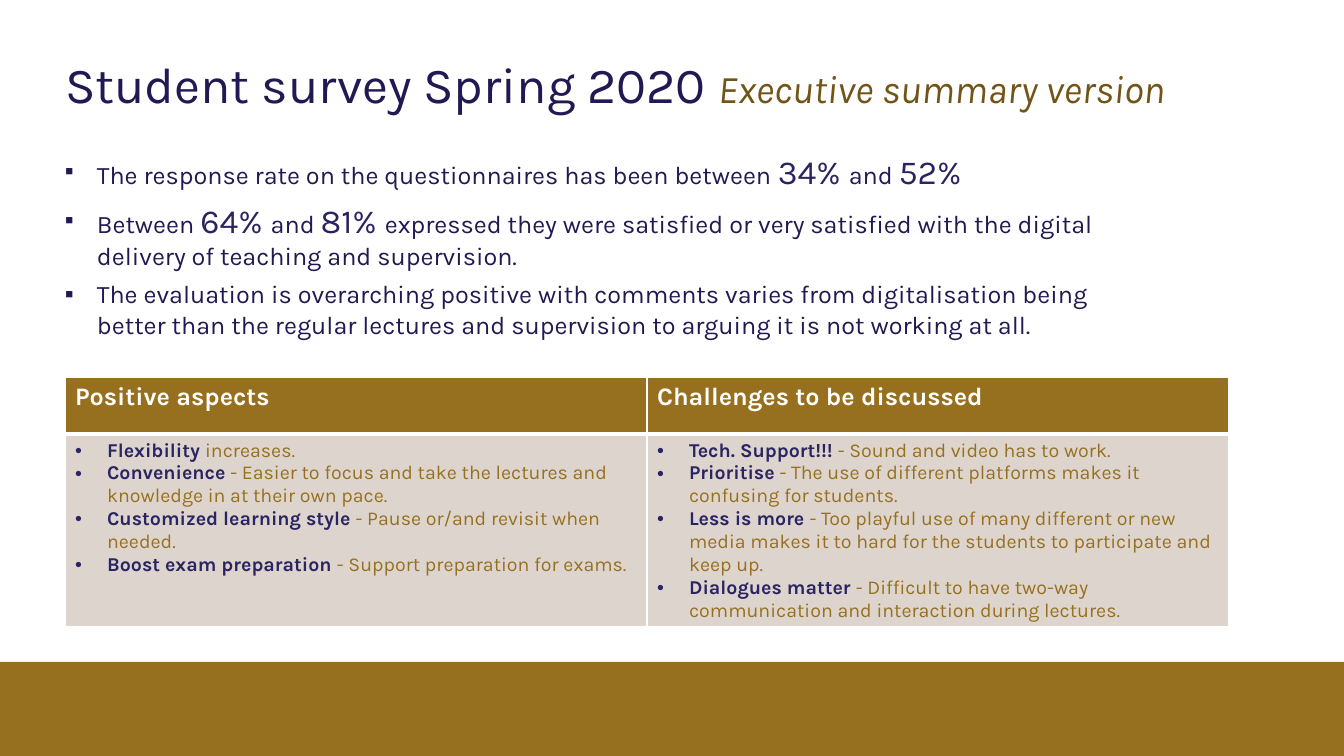
from lxml import etree
from pptx import Presentation
from pptx import util as u
from pptx.dml.color import RGBColor
from pptx.enum import shapes, text
from pptx.oxml.ns import qn

INK = {"navy": "211A52", "plum": "2A2463", "gold": "97701F",
       "bronze": "715417", "sand": "DDD5CD", "white": "FFFFFF"}
FONT = "Karla"
INDENT = 32

TITLE = [("Student survey Spring 2020 ", 36, "navy", False),
         ("Executive summary version", 28, "bronze", True)]

POINTS = [
    ["The response rate on the questionnaires has been between ", "34% ", "and ", "52%"],
    ["Between ", "64% ", "and ", "81% ",
     "expressed they were satisfied or very satisfied with the digital "
     "delivery of teaching and supervision."],
    ["The evaluation is overarching positive with comments varies from digitalisation "
     "being better than the regular lectures and supervision to arguing it is not "
     "working at all."],
]

ASPECTS = {
    "Positive aspects": [
        ("Flexibility ", "increases."),
        ("Convenience", " - Easier to focus and take the lectures and knowledge in "
                        "at their own pace."),
        ("Customized learning style ", "- Pause or/and revisit when needed."),
        ("Boost exam preparation ", "- Support preparation for exams."),
    ],
    "Challenges to be discussed": [
        ("Tech. Support!!! ", "- Sound and video has to work."),
        ("Prioritise", " - The use of different platforms makes it confusing for students."),
        ("Less is more ", "- Too playful use of many different or new media makes it "
                          "to hard for the students to participate and keep up."),
        ("Dialogues matter ", "- Difficult to have two-way communication and "
                              "interaction during lectures."),
    ],
}


def px(n):
    """Turn pixels into EMU."""
    return u.Emu(round(n * 914400 / 100.8))


def tint(name):
    """Look up a colour by name."""
    return RGBColor.from_string(INK[name])


def write(para, words, size, hue, bold=False, slant=False):
    """Add one run to a paragraph."""
    run = para.add_run()
    run.text = words
    font = run.font
    font.name, font.size = FONT, u.Pt(size)
    font.bold, font.italic = bold, slant
    font.color.rgb = tint(hue)


def line(frame, num):
    """Return the first paragraph of a frame, or a new one after it."""
    return frame.add_paragraph() if num else frame.paragraphs[0]


def bullet(para, mark):
    """Give a paragraph a hanging bullet."""
    props = para._p.get_or_add_pPr()
    props.set("marL", str(px(INDENT)))
    props.set("indent", str(-px(INDENT)))
    etree.SubElement(props, qn("a:buFont"), typeface="Arial")
    etree.SubElement(props, qn("a:buChar"), char=mark)


def inset(frame, top, low):
    """Set the margins of a wrapped, top-anchored frame."""
    frame.word_wrap = True
    frame.auto_size = text.MSO_AUTO_SIZE.NONE
    frame.vertical_anchor = text.MSO_ANCHOR.TOP
    frame.margin_left = frame.margin_right = 0
    frame.margin_top, frame.margin_bottom = px(top), px(low)


def band(slide, box):
    """Draw the footer band."""
    bar = slide.shapes.add_shape(shapes.MSO_SHAPE.RECTANGLE, *map(px, box))
    bar.shadow.inherit = False
    bar.fill.solid()
    bar.fill.fore_color.rgb = tint("gold")
    bar.line.fill.background()


def head(slide, box):
    """Place and fill the title."""
    title = slide.shapes.title
    title.left, title.top, title.width, title.height = map(px, box)
    inset(title.text_frame, 21, 0)
    para = title.text_frame.paragraphs[0]
    para.alignment = text.PP_ALIGN.LEFT
    para.line_spacing = 0.9
    for words, size, hue, slant in TITLE:
        write(para, words, size, hue, slant=slant)


def body(slide, box):
    """Place the bulleted findings, with percentages set larger."""
    frame = slide.shapes.add_textbox(*map(px, box)).text_frame
    inset(frame, 5, 5)
    for num, parts in enumerate(POINTS):
        para = line(frame, num)
        para.space_before = u.Pt(6 if num else 0)
        bullet(para, "▪")
        for words in parts:
            big = "%" in words
            write(para, words, 24 if big else 18, "plum" if big else "navy")


def paint(cell, hue, edges):
    """Fill a cell and draw white borders of the given widths."""
    cell.fill.solid()
    cell.fill.fore_color.rgb = tint(hue)
    props = cell._tc.get_or_add_tcPr()
    for num, (side, wide) in enumerate(zip("LRTB", edges)):
        edge = etree.Element(qn("a:ln" + side), w=str(u.Pt(wide)))
        fill = etree.SubElement(edge, qn("a:solidFill"))
        etree.SubElement(fill, qn("a:srgbClr"), val=INK["white"])
        props.insert(num, edge)


def grid(slide, box, rows):
    """Place the two-column table of aspects."""
    table = slide.shapes.add_table(2, len(ASPECTS), *map(px, box)).table
    table.first_row = table.horz_banding = False
    for row, tall in zip(table.rows, rows):
        row.height = px(tall)
    for col, (name, items) in enumerate(ASPECTS.items()):
        table.columns[col].width = px(box[2] / len(ASPECTS))
        top, low = table.cell(0, col), table.cell(1, col)
        paint(top, "gold", (1, 1, 1, 3))
        paint(low, "sand", (1, 1, 3, 1))
        write(top.text_frame.paragraphs[0], name, 18, "white", True)
        for num, (key, rest) in enumerate(items):
            para = line(low.text_frame, num)
            bullet(para, "•")
            write(para, key, 14, "plum", True)
            write(para, rest, 14, "gold")


def main():
    """Build and save the slide."""
    deck = Presentation()
    deck.slide_width, deck.slide_height = px(1344), px(756)
    slide = deck.slides.add_slide(deck.slide_layouts[5])
    band(slide, (0, 662, 1344, 94))
    head(slide, (65, 39, 1265, 116))
    body(slide, (65, 146, 1048, 220))
    grid(slide, (65, 377, 1164, 250), (57, 193))
    deck.save("out.pptx")


if __name__ == "__main__":
    main()
